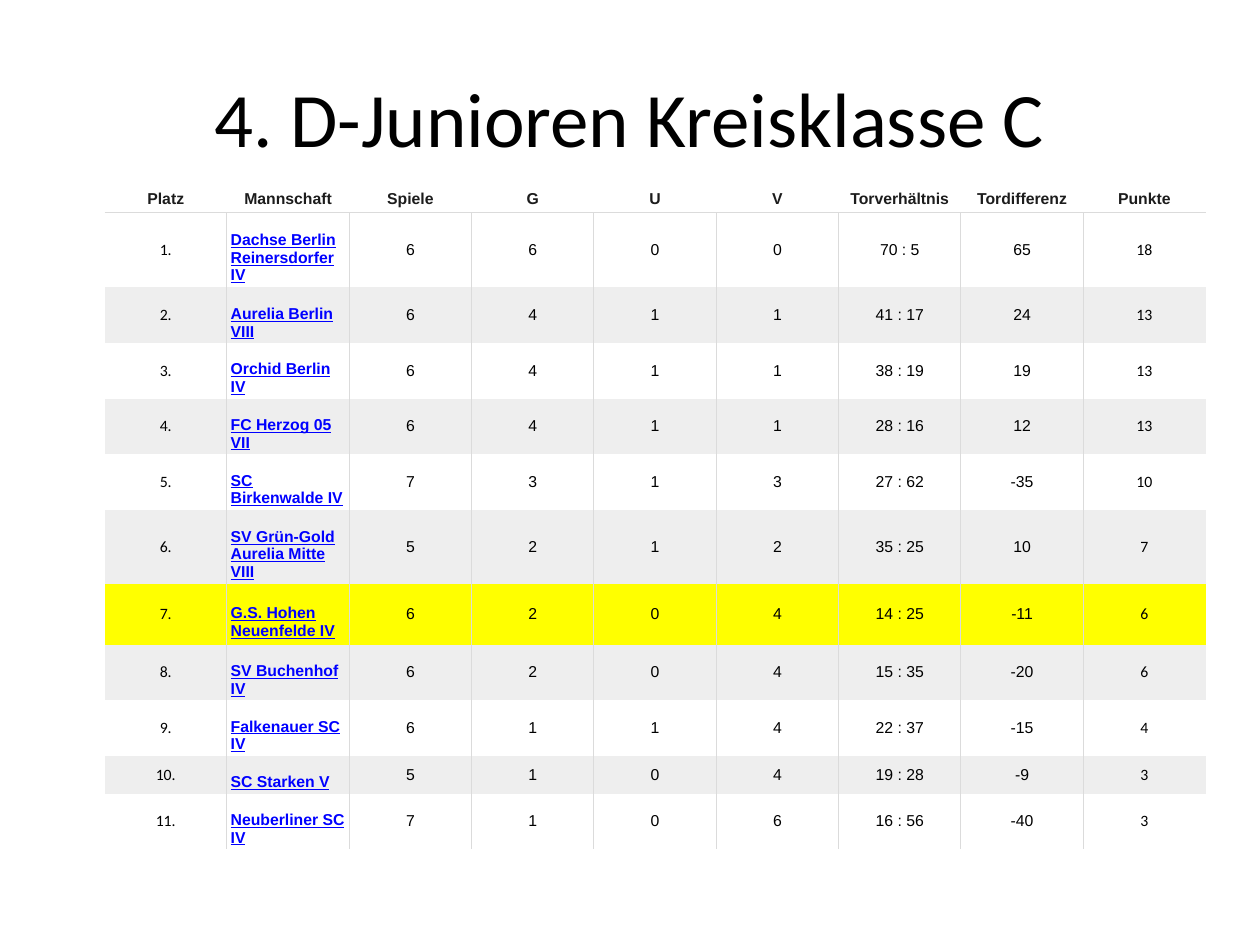
from lxml import etree
from pptx import Presentation, util as u
from pptx.dml.color import RGBColor
from pptx.enum import text
from pptx.oxml import ns

BLACK = RGBColor(0x00, 0x00, 0x00)
HEADER_TEXT = RGBColor(0x1C, 0x1C, 0x1C)
LINK_BLUE = RGBColor(0x00, 0x00, 0xFF)
WHITE = RGBColor(0xFF, 0xFF, 0xFF)
BAND_GREY = RGBColor(0xEE, 0xEE, 0xEE)
HIGHLIGHT = RGBColor(0xFF, 0xFF, 0x00)
GRID_GREY = RGBColor(0xDB, 0xDB, 0xDB)
NO_STYLE = "{2D5ABB26-0587-4C30-8999-92F81FD0307C}"

HEADERS = ["Platz", "Mannschaft", "Spiele", "G", "U", "V",
           "Torverhältnis", "Tordifferenz", "Punkte"]
# team, games, won, drawn, lost, goals, goal difference, points
STANDINGS = [
    ("Dachse Berlin Reinersdorfer IV", 6, 6, 0, 0, "70 : 5", 65, 18),
    ("Aurelia Berlin VIII", 6, 4, 1, 1, "41 : 17", 24, 13),
    ("Orchid Berlin IV", 6, 4, 1, 1, "38 : 19", 19, 13),
    ("FC Herzog 05 VII", 6, 4, 1, 1, "28 : 16", 12, 13),
    ("SC Birkenwalde IV", 7, 3, 1, 3, "27 : 62", -35, 10),
    ("SV Grün-Gold Aurelia Mitte VIII", 5, 2, 1, 2, "35 : 25", 10, 7),
    ("G.S. Hohen Neuenfelde IV", 6, 2, 0, 4, "14 : 25", -11, 6),
    ("SV Buchenhof IV", 6, 2, 0, 4, "15 : 35", -20, 6),
    ("Falkenauer SC IV", 6, 1, 1, 4, "22 : 37", -15, 4),
    ("SC Starken V", 5, 1, 0, 4, "19 : 28", -9, 3),
    ("Neuberliner SC IV", 7, 1, 0, 6, "16 : 56", -40, 3),
]
ROW_HEIGHTS = [0.22, 0.54, 0.35, 0.35, 0.35, 0.35, 0.54, 0.48, 0.35, 0.28, 0.3, 0.35]
HIGHLIGHT_ROW = 7
TEAM_COLUMN = 1
LAST_COLUMN = len(HEADERS) - 1


def draw_borders(cell, sides):
    """Line the given sides, named in the order L, R, T, B."""
    properties = cell._tc.get_or_add_tcPr()
    for position, side in enumerate(sides):
        line = etree.Element(ns.qn(f"a:ln{side}"), w=str(u.Pt(0.75)))
        fill = etree.SubElement(line, ns.qn("a:solidFill"))
        etree.SubElement(fill, ns.qn("a:srgbClr"), val=str(GRID_GREY))
        properties.insert(position, line)


presentation = Presentation()
presentation.slide_width = u.Inches(10)
presentation.slide_height = u.Inches(7.5)
slide = presentation.slides.add_slide(presentation.slide_layouts[6])

title = slide.shapes.add_textbox(u.Inches(0.5), u.Inches(0.3), u.Inches(9), u.Inches(1.25))
title.text_frame.word_wrap = True
title.text_frame.vertical_anchor = text.MSO_ANCHOR.MIDDLE
paragraph = title.text_frame.paragraphs[0]
paragraph.text = "4. D-Junioren Kreisklasse C"
paragraph.alignment = text.PP_ALIGN.CENTER
paragraph.font.name = "Calibri"
paragraph.font.size = u.Pt(44)
paragraph.font.color.rgb = BLACK

rows = [HEADERS] + [(f"{place}.", *team) for place, team in enumerate(STANDINGS, 1)]
table = slide.shapes.add_table(
    len(rows), len(HEADERS), u.Inches(0.83), u.Inches(1.47),
    u.Inches(8.74), u.Inches(sum(ROW_HEIGHTS))).table
table.first_row = False
table.horz_banding = False
table._tbl.tblPr.find(ns.qn("a:tableStyleId")).text = NO_STYLE

for row, values in enumerate(rows):
    table.rows[row].height = u.Inches(ROW_HEIGHTS[row])
    is_header = row == 0
    for column, value in enumerate(values):
        is_team = column == TEAM_COLUMN and not is_header
        cell = table.cell(row, column)
        cell.vertical_anchor = text.MSO_ANCHOR.MIDDLE
        cell.margin_left = cell.margin_right = u.Inches(0.03)
        cell.margin_top = u.Inches(0.13 if is_team else 0.01)
        cell.margin_bottom = u.Inches(0.01)
        cell.fill.solid()
        if row == HIGHLIGHT_ROW:
            cell.fill.fore_color.rgb = HIGHLIGHT
        else:
            cell.fill.fore_color.rgb = BAND_GREY if row and row % 2 == 0 else WHITE

        paragraph = cell.text_frame.paragraphs[0]
        paragraph.text = str(value)
        paragraph.alignment = text.PP_ALIGN.LEFT if is_team else text.PP_ALIGN.CENTER
        font = paragraph.font
        font.size = u.Pt(9)
        font.bold = is_header or is_team
        font.underline = is_team
        outer = column in (0, LAST_COLUMN)
        font.name = "Calibri" if outer and not is_header else "Arial"
        font.color.rgb = HEADER_TEXT if is_header else LINK_BLUE if is_team else BLACK

        if is_header:
            draw_borders(cell, "B")
        else:
            draw_borders(cell, ("L" if column > 0 else "") + ("R" if column < LAST_COLUMN else ""))

presentation.save("out.pptx")
